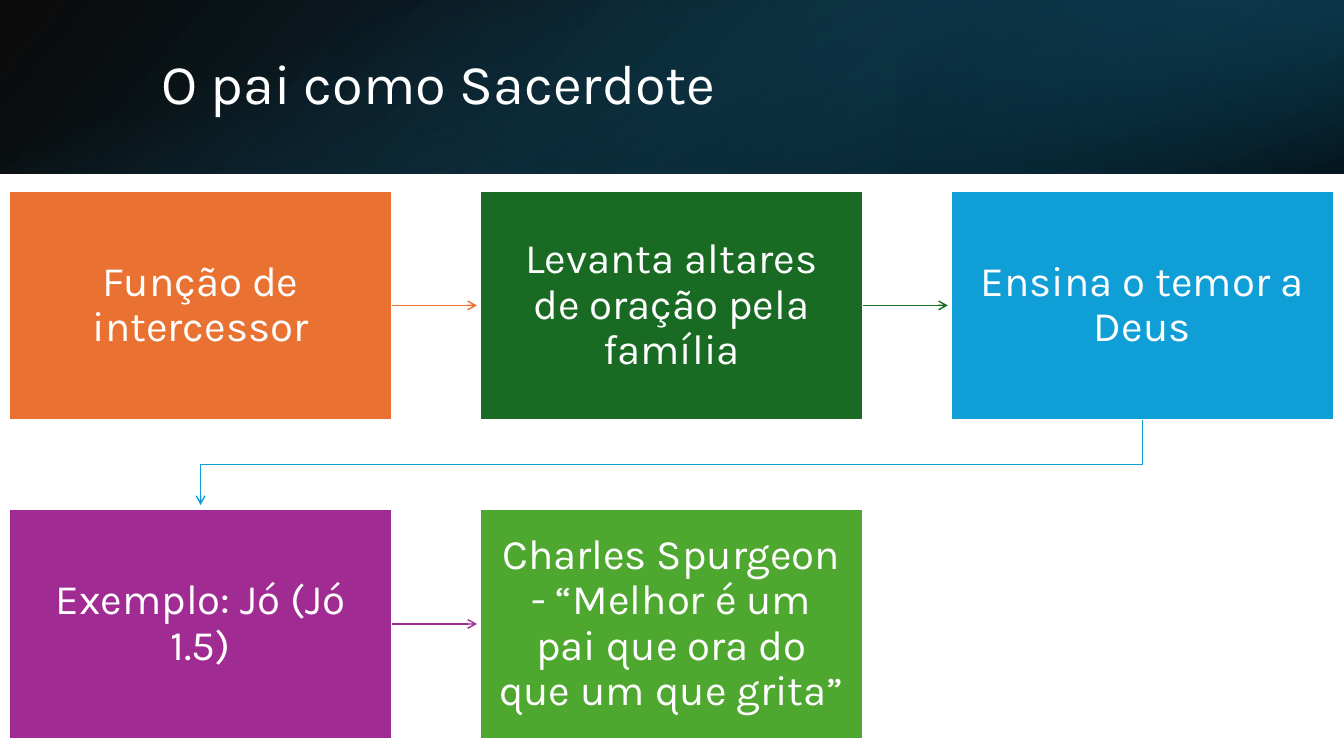
from itertools import pairwise
from lxml.etree import SubElement
from pptx import Presentation
from pptx.dml.color import RGBColor
from pptx.enum.shapes import MSO_CONNECTOR as Connector, MSO_SHAPE as Shape
from pptx.enum.text import MSO_ANCHOR as Anchor, PP_ALIGN as Align
from pptx.oxml.ns import qn
from pptx.util import Inches, Pt

COLORS = {
    "white": "FFFFFF", "black": "000000", "navy": "104862",
    "deep": "0B3041", "teal": "156082", "orange": "E97132",
    "forest": "196B24", "blue": "0F9ED5", "purple": "A02B93",
    "green": "4EA72E",
}
STEPS = [
    ("Função de intercessor", "orange"),
    ("Levanta altares de oração pela família", "forest"),
    ("Ensina o temor a Deus", "blue"),
    ("Exemplo: Jó (Jó 1.5)", "purple"),
    ("Charles Spurgeon - “Melhor é um pai que ora do que um que grita”", "green"),
]
COLUMNS = 3
LEFT, TOP = 0.09, 1.89
WIDTH, HEIGHT = 3.8, 2.28
COLUMN_PITCH, ROW_PITCH = 4.67, 3.16
ARROW_LENGTH = 0.84
BANNER_WIDTH, BANNER_HEIGHT = 13.33, 1.72


class SlidePainter:
    font = "Karla"

    def __init__(self, page):
        self.page = page

    def color(self, name):
        return RGBColor.from_string(COLORS[name])

    def rectangle(self, left, top, width, height):
        box = self.page.shapes.add_shape(
            Shape.RECTANGLE, Inches(left), Inches(top), Inches(width), Inches(height))
        box.shadow.inherit = False
        return box

    def set_text(self, box, text, size, align, margins):
        frame = box.text_frame
        frame.text = text
        frame.word_wrap = True
        frame.vertical_anchor = Anchor.MIDDLE
        side, edge = (Inches(margin) for margin in margins)
        frame.margin_left = frame.margin_right = side
        frame.margin_top = frame.margin_bottom = edge
        para = frame.paragraphs[0]
        para.alignment = align
        para.line_spacing = 0.9
        for span in para.runs:
            span.font.name = self.font
            span.font.size = Pt(size)
            span.font.color.rgb = self.color("white")

    def gradient(self, place, stops, angle, rotation=0, flipped=False):
        box = self.rectangle(*place)
        box.line.fill.background()
        box.rotation = rotation
        if flipped:
            box._element.spPr.find(qn("a:xfrm")).set("flipH", "1")
        box.fill.gradient()
        box.fill.gradient_angle = 360 - angle
        for stop, (position, name, _) in zip(box.fill.gradient_stops, stops):
            stop.position = position / 100
            stop.color.rgb = self.color(name)
        fill = box._element.spPr.find(qn("a:gradFill"))
        for color, (_, _, opacity) in zip(fill.iter(qn("a:srgbClr")), stops):
            SubElement(color, qn("a:alpha")).set("val", str(opacity * 1000))

    def title(self, text, left, top, width, height):
        box = self.page.shapes.add_textbox(
            Inches(left), Inches(top), Inches(width), Inches(height))
        self.set_text(box, text, 40, Align.LEFT, (0.1, 0.05))

    def step(self, text, name, left, top):
        box = self.rectangle(left, top, WIDTH, HEIGHT)
        box.fill.solid()
        box.fill.fore_color.rgb = self.color(name)
        box.line.color.rgb = self.color("white")
        box.line.width = Pt(1.5)
        self.set_text(box, text, 30, Align.CENTER, (0.19, 0.2))
        return box

    def style_arrow(self, arrow, name):
        arrow.line.color.rgb = self.color(name)
        arrow.line.width = Pt(1)
        properties = arrow._element.spPr
        SubElement(properties.find(qn("a:ln")), qn("a:tailEnd")).set("type", "arrow")
        if properties.find(qn("a:effectLst")) is None:
            SubElement(properties, qn("a:effectLst"))

    def straight_arrow(self, box, name):
        start = box.left + box.width
        middle = box.top + box.height // 2
        arrow = self.page.shapes.add_connector(
            Connector.STRAIGHT, start, middle, start + Inches(ARROW_LENGTH), middle)
        arrow.begin_connect(box, 3)
        self.style_arrow(arrow, name)

    def return_arrow(self, source, target, name):
        start_x = source.left + source.width // 2
        end_x = target.left + target.width // 2
        start_y = source.top + source.height
        turn_y = (start_y + target.top) // 2
        builder = self.page.shapes.build_freeform(start_x, start_y)
        builder.add_line_segments(
            [(start_x, turn_y), (end_x, turn_y),
             (end_x, start_y + Inches(ARROW_LENGTH))], close=False)
        arrow = builder.convert_to_shape()
        arrow.shadow.inherit = False
        arrow.fill.background()
        self.style_arrow(arrow, name)


def main():
    deck = Presentation()
    deck.slide_width, deck.slide_height = Inches(13.33), Inches(7.5)
    painter = SlidePainter(deck.slides.add_slide(deck.slide_layouts[6]))

    painter.gradient((0, 0, BANNER_WIDTH, BANNER_HEIGHT),
                     [(0, "black", 96), (100, "navy", 100)], 140, flipped=True)
    painter.gradient((8.89, 0, 4.44, BANNER_HEIGHT),
                     [(19, "deep", 68), (100, "teal", 79)], 320, 180, True)
    offset = (BANNER_WIDTH - BANNER_HEIGHT) / 2
    painter.gradient((offset, -offset, BANNER_HEIGHT, BANNER_WIDTH),
                     [(23, "teal", 0), (99, "black", 74)], 340, 90)
    painter.title("O pai como Sacerdote", 1.5, 0.38, 10.98, 0.96)

    boxes = []
    for index, (text, name) in enumerate(STEPS):
        row, column = divmod(index, COLUMNS)
        boxes.append(painter.step(
            text, name, LEFT + column * COLUMN_PITCH, TOP + row * ROW_PITCH))
    for (source, target), (_, name) in zip(pairwise(boxes), STEPS):
        if source.top == target.top:
            painter.straight_arrow(source, name)
        else:
            painter.return_arrow(source, target, name)
    deck.save("out.pptx")


if __name__ == "__main__":
    main()
